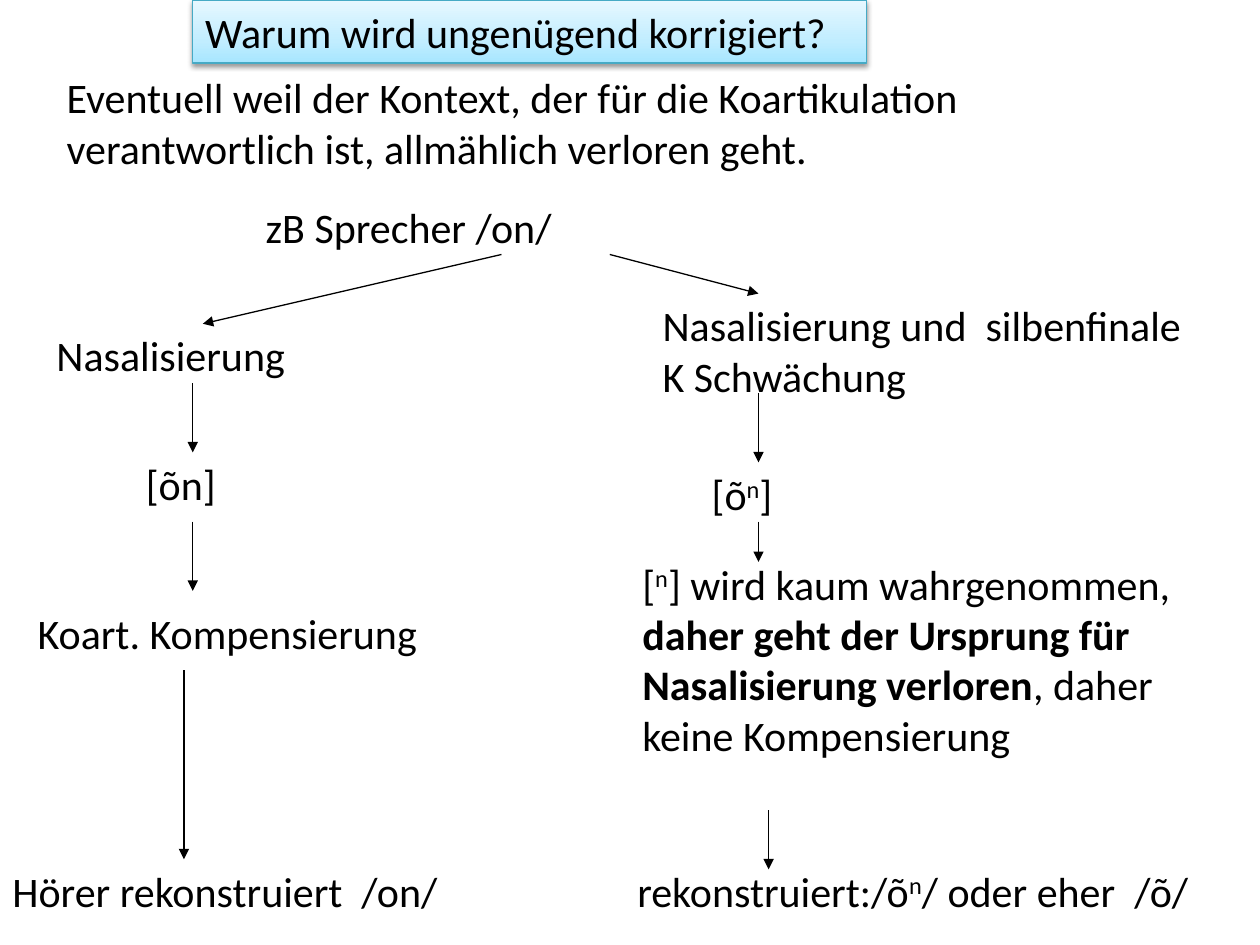
from lxml import etree
from pptx import Presentation
from pptx.dml.color import RGBColor
from pptx.enum.shapes import MSO_CONNECTOR, MSO_SHAPE
from pptx.enum.text import MSO_ANCHOR, MSO_AUTO_SIZE, PP_ALIGN
from pptx.oxml import parse_xml
from pptx.oxml.ns import qn
from pptx.util import Inches, Pt

RECTANGLE = MSO_SHAPE.RECTANGLE
STRAIGHT = MSO_CONNECTOR.STRAIGHT
FIT_SHAPE = MSO_AUTO_SIZE.SHAPE_TO_FIT_TEXT
TOP = MSO_ANCHOR.TOP
LEFT = PP_ALIGN.LEFT
DRAWING_NS = 'xmlns:a="http://schemas.openxmlformats.org/drawingml/2006/main"'

COLORS = {
    "ink": "000000",
    "border": "46AAC5",
    "deep": "A7E6FF",
    "middle": "C1EDFF",
    "pale": "E7F8FF",
}


class SlideBuilder:
    """Holds the text style and the page being filled."""

    font_name = "Calibri"
    font_size = Pt(24)
    line_width = Pt(0.75)

    def __init__(self, page):
        self.page = page

    def color(self, name):
        return RGBColor.from_string(COLORS[name])

    def fill_text(self, frame, parts, wrap):
        """Fill a frame; each part is a plain string or a (text, style) pair."""
        frame.word_wrap = wrap
        frame.auto_size = FIT_SHAPE
        frame.vertical_anchor = TOP
        para = frame.paragraphs[0]
        para.alignment = LEFT
        para.font.name = self.font_name
        para.font.size = self.font_size
        para.font.color.rgb = self.color("ink")
        for part in parts:
            text, style = (part, None) if isinstance(part, str) else part
            span = para.add_run()
            span.text = text
            if style == "bold":
                span.font.bold = True
            elif style == "super":
                span._r.get_or_add_rPr().set("baseline", "30000")

    def text(self, left, top, width, height, *parts, wrap=True):
        box = self.page.shapes.add_textbox(
            Inches(left), Inches(top), Inches(width), Inches(height))
        self.fill_text(box.text_frame, parts, wrap)

    def banner(self, left, top, width, height, *parts):
        box = self.page.shapes.add_shape(
            RECTANGLE, Inches(left), Inches(top), Inches(width), Inches(height))
        box.line.color.rgb = self.color("border")
        box.line.width = self.line_width
        box.shadow.inherit = False

        # Three-stop gradient, deep at the bottom
        box.fill.gradient()
        box.fill.gradient_angle = 90
        properties = box._element.spPr
        stops = properties.find(".//" + qn("a:gsLst"))
        for stop in list(stops):
            stops.remove(stop)
        for position, name in ((0, "deep"), (35, "middle"), (100, "pale")):
            stops.append(parse_xml(
                f'<a:gs {DRAWING_NS} pos="{position * 1000}">'
                f'<a:srgbClr val="{COLORS[name]}"/></a:gs>'))

        # Soft shadow below
        properties.find(qn("a:effectLst")).append(parse_xml(
            f'<a:outerShdw {DRAWING_NS} blurRad="{Pt(3.1)}" dist="{Pt(1.6)}" '
            f'dir="5400000" rotWithShape="0"><a:srgbClr val="{COLORS["ink"]}">'
            '<a:alpha val="38000"/></a:srgbClr></a:outerShdw>'))
        self.fill_text(box.text_frame, parts, True)

    def arrow(self, start_x, start_y, end_x, end_y):
        line = self.page.shapes.add_connector(
            STRAIGHT, Inches(start_x), Inches(start_y),
            Inches(end_x), Inches(end_y))
        line.line.color.rgb = self.color("ink")
        line.line.width = self.line_width
        outline = line.line._get_or_add_ln()
        etree.SubElement(outline, qn("a:tailEnd"), type="triangle")
        etree.SubElement(line._element.spPr, qn("a:effectLst"))


def main():
    deck = Presentation()
    deck.slide_width, deck.slide_height = Inches(10), Inches(7.5)
    slide = SlideBuilder(deck.slides.add_slide(deck.slide_layouts[6]))
    small_n = ("n", "super")

    # Question and answer
    slide.text(0.43, 0.52, 8.82, 0.91,
               "Eventuell weil der Kontext, der für die Koartikulation "
               "verantwortlich ist, allmählich verloren geht.")
    slide.banner(1.53, 0, 5.35, 0.5, "Warum wird ungenügend korrigiert?")

    # Speaker, where both paths begin
    slide.text(2.01, 1.55, 2.49, 0.5, "zB Sprecher /on/", wrap=False)
    slide.arrow(3.98, 2.02, 1.61, 2.57)
    slide.arrow(4.84, 2.02, 6.02, 2.33)

    # Left path: compensation succeeds
    slide.text(0.35, 2.57, 2.03, 0.5, "Nasalisierung", wrap=False)
    slide.text(1.06, 3.59, 1.34, 0.5, "[õn]")
    slide.text(0.2, 4.77, 3.25, 0.5, "Koart. Kompensierung", wrap=False)
    slide.text(0, 6.82, 3.65, 0.5, "Hörer rekonstruiert  /on/", wrap=False)

    # Right path: the source of nasalisation is lost
    slide.text(5.16, 2.33, 4.49, 0.91,
               "Nasalisierung und  silbenfinale K Schwächung")
    slide.text(5.55, 3.67, 0.7, 0.51, "[õ", small_n, "]", wrap=False)
    slide.text(5, 4.38, 4.57, 1.72, "[", small_n, "] wird kaum wahrgenommen, ",
               ("daher geht der Ursprung für Nasalisierung verloren", "bold"),
               ", daher keine Kompensierung")
    slide.text(4.96, 6.82, 5.04, 0.5,
               "rekonstruiert:/õ", small_n, "/ oder eher  /õ/")

    # Downward arrows: x, top, bottom
    for x, top, bottom in (
        (1.53, 3.04, 3.59), (1.53, 4.14, 4.69), (1.46, 5.32, 6.82),
        (6.02, 3.12, 3.67), (6.02, 4.14, 4.46), (6.1, 6.43, 6.9),
    ):
        slide.arrow(x, top, x, bottom)

    deck.save("out.pptx")


if __name__ == "__main__":
    main()
